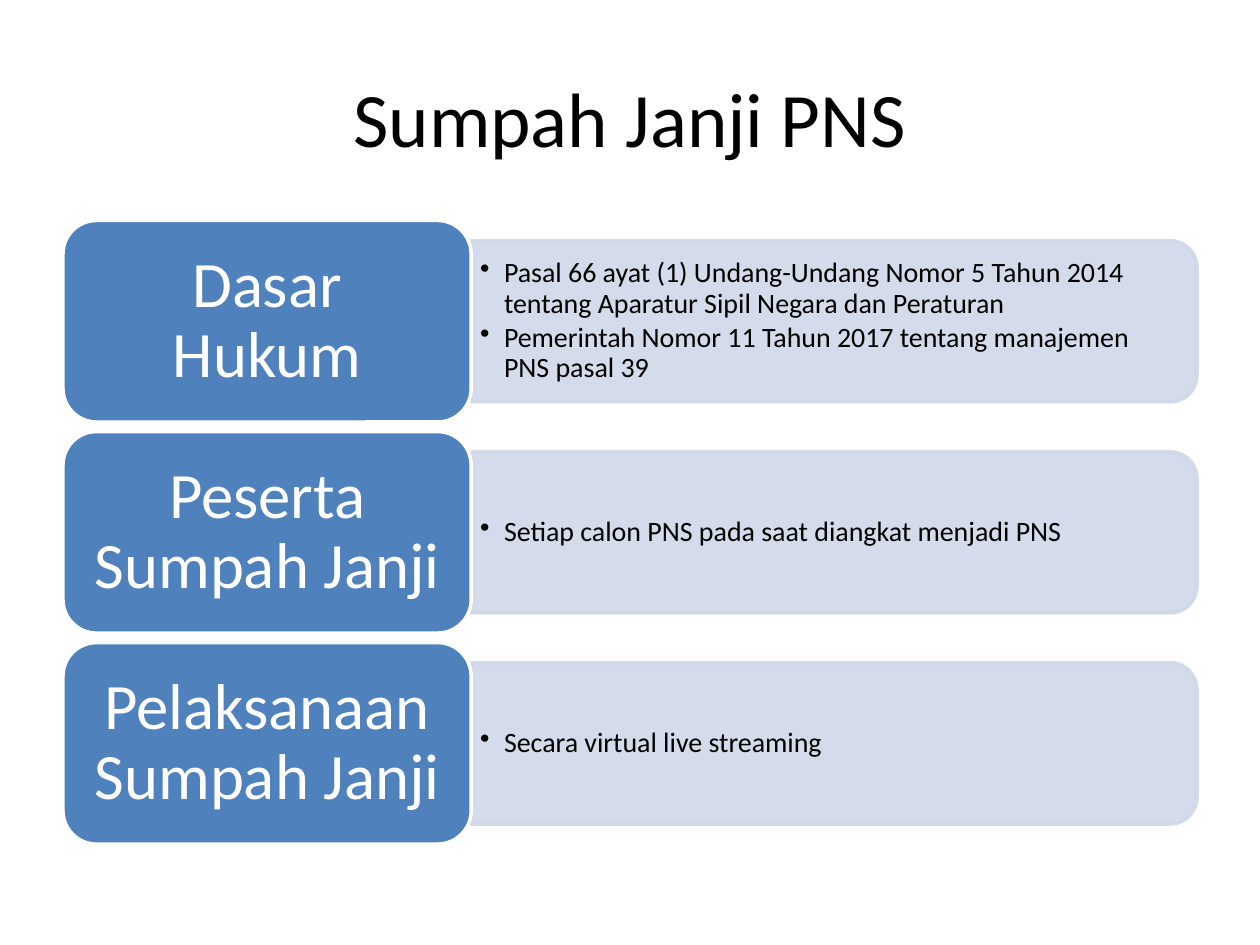
import pptx
import pptx.util
import pptx.dml.color
import pptx.enum.shapes
import pptx.enum.text
import pptx.oxml
import pptx.oxml.ns
from lxml import etree

# Content: label and bullet points of each row
TITLE = "Sumpah Janji PNS"
ROWS = [
    ("Dasar Hukum", [
        "Pasal 66 ayat (1) Undang-Undang Nomor 5 Tahun 2014 tentang Aparatur Sipil Negara dan Peraturan",
        "Pemerintah Nomor 11 Tahun 2017 tentang manajemen PNS pasal 39",
    ]),
    ("Peserta Sumpah Janji", ["Setiap calon PNS pada saat diangkat menjadi PNS"]),
    ("Pelaksanaan Sumpah Janji", ["Secara virtual live streaming"]),
]

# Look
FONT = "Calibri"
BLACK, WHITE, BLUE, PALE = "000000", "FFFFFF", "4F81BD", "D0D8E8"
PANEL_OPACITY = 90

# Grid in inches
SLIDE_WIDTH, SLIDE_HEIGHT = 10, 7.5
LEFT, TOP, WIDTH, HEIGHT = 0.5, 1.75, 9, 4.95
LABEL_WIDTH, LABEL_HEIGHT = 0.36 * WIDTH, 1.6
PANEL_WIDTH, PANEL_HEIGHT = WIDTH - LABEL_WIDTH, 0.8 * LABEL_HEIGHT
TEXT_WIDTH, TEXT_HEIGHT = 5.7, 1.15
ROW_STEP = (HEIGHT - LABEL_HEIGHT) / (len(ROWS) - 1)

Inches, Pt = pptx.util.Inches, pptx.util.Pt
Shapes = pptx.enum.shapes.MSO_SHAPE
Align = pptx.enum.text.PP_ALIGN


def color(hex_string):
    return pptx.dml.color.RGBColor.from_string(hex_string)


def add_bullet(paragraph, indent):
    properties = paragraph._p.get_or_add_pPr()
    properties.set("marL", str(Inches(indent)))
    properties.set("indent", str(-Inches(indent)))
    bullet = etree.SubElement(properties, pptx.oxml.ns.qn("a:buChar"))
    bullet.set("char", "•")


def write(shape, lines, size, text_color=BLACK, align=Align.LEFT,
          insets=(0.1, 0.05), spacing=None, after=None, bullet_indent=None):
    frame = shape.text_frame
    frame.word_wrap = True
    frame.vertical_anchor = pptx.enum.text.MSO_ANCHOR.MIDDLE
    frame.margin_left = frame.margin_right = Inches(insets[0])
    frame.margin_top = frame.margin_bottom = Inches(insets[1])
    for index, line in enumerate(lines):
        paragraph = frame.add_paragraph() if index else frame.paragraphs[0]
        paragraph.text = line
        paragraph.alignment = align
        if spacing:
            paragraph.line_spacing = spacing
        if after:
            paragraph.space_after = Pt(after)
        if bullet_indent:
            add_bullet(paragraph, bullet_indent)
        font = paragraph.runs[0].font
        font.name, font.size = FONT, Pt(size)
        font.color.rgb = color(text_color)


def add_block(slide, kind, center_x, center_y, width, height, fill, line, opacity=None):
    shape = slide.shapes.add_shape(
        kind, Inches(center_x - width / 2), Inches(center_y - height / 2),
        Inches(width), Inches(height))
    shape.shadow.inherit = False
    shape.fill.solid()
    shape.fill.fore_color.rgb = color(fill)
    shape.line.color.rgb = color(line)
    shape.line.width = Pt(2)
    if opacity:
        for color_element in shape._element.spPr.iter(pptx.oxml.ns.qn("a:srgbClr")):
            alpha = etree.SubElement(color_element, pptx.oxml.ns.qn("a:alpha"))
            alpha.set("val", str(opacity * 1000))
    return shape


def add_row(slide, center_y, label, points):
    panel_left = LEFT + LABEL_WIDTH

    # Panel, turned so that its rounded end faces right
    panel = add_block(slide, Shapes.ROUND_2_SAME_RECTANGLE,
                      panel_left + PANEL_WIDTH / 2, center_y,
                      PANEL_HEIGHT, PANEL_WIDTH, PALE, PALE, PANEL_OPACITY)
    panel.rotation = 90

    # Bullet points
    text_box = slide.shapes.add_textbox(
        Inches(panel_left), Inches(center_y - TEXT_HEIGHT / 2),
        Inches(TEXT_WIDTH), Inches(TEXT_HEIGHT))
    write(text_box, points, 16, insets=(0.07, 0.03), spacing=0.9, after=2.4,
          bullet_indent=0.19)

    # Label
    label_block = add_block(slide, Shapes.ROUNDED_RECTANGLE,
                            LEFT + LABEL_WIDTH / 2, center_y,
                            LABEL_WIDTH, LABEL_HEIGHT, BLUE, WHITE)
    write(label_block, [label], 37, text_color=WHITE, align=Align.CENTER,
          insets=(0.16, 0.08), spacing=0.9)


def main():
    presentation = pptx.Presentation()
    presentation.slide_width = Inches(SLIDE_WIDTH)
    presentation.slide_height = Inches(SLIDE_HEIGHT)
    slide = presentation.slides.add_slide(presentation.slide_layouts[5])

    # Title
    title = slide.shapes.title
    title.left, title.top = Inches(LEFT), Inches(0.3)
    title.width, title.height = Inches(WIDTH), Inches(1.25)
    write(title, [TITLE], 44, align=Align.CENTER)

    # Rows
    for index, (label, points) in enumerate(ROWS):
        add_row(slide, TOP + LABEL_HEIGHT / 2 + index * ROW_STEP, label, points)

    presentation.save("out.pptx")


if __name__ == "__main__":
    main()
